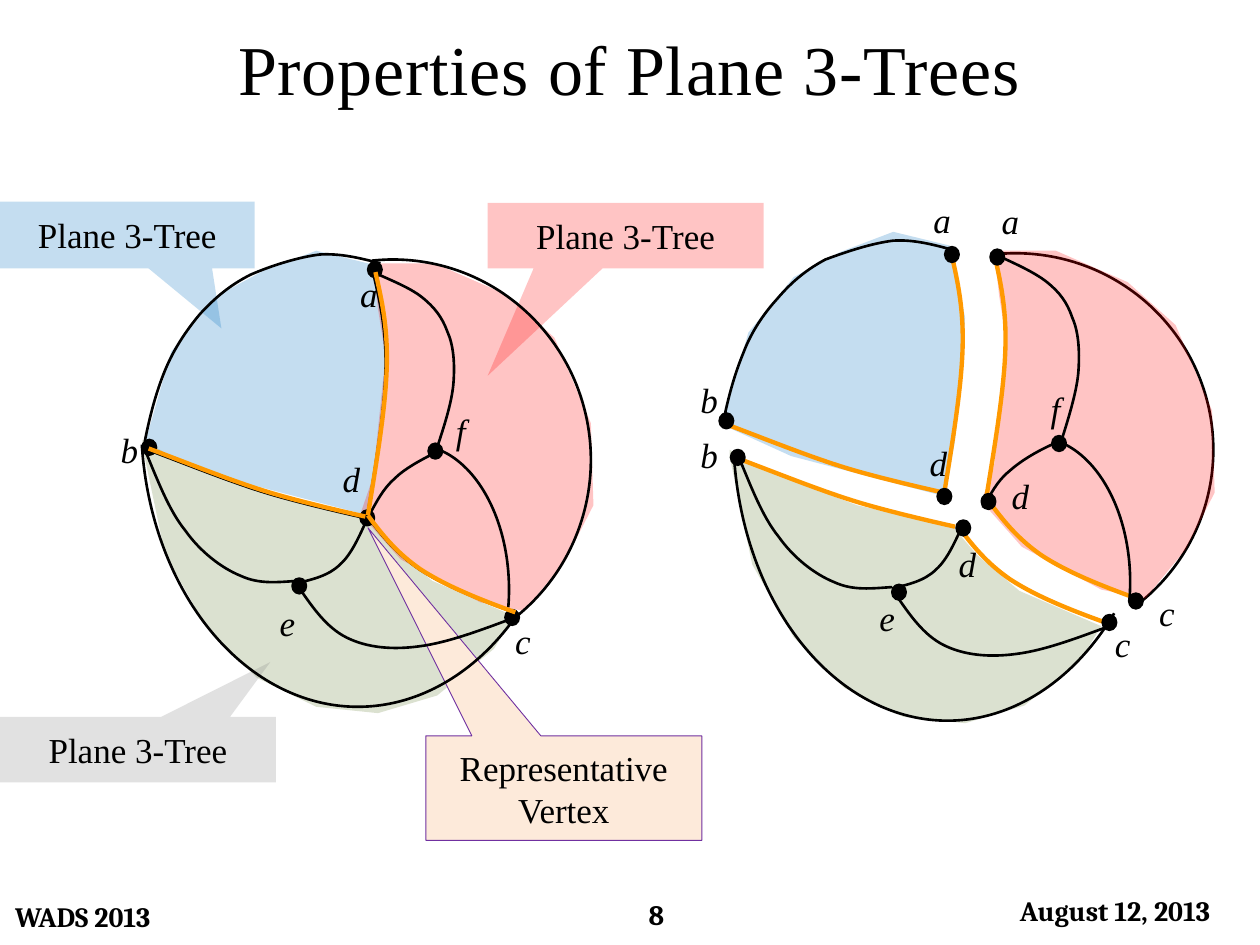
from dataclasses import dataclass

from lxml import etree
from pptx import Presentation
from pptx.dml.color import RGBColor
from pptx.enum.shapes import MSO_SHAPE
from pptx.enum.text import MSO_ANCHOR, PP_ALIGN
from pptx.oxml.ns import qn
from pptx.util import Pt

PX = 9144  # EMU in one px, 100 px to the inch
ARC, CALLOUT, ELLIPSE = MSO_SHAPE.ARC, MSO_SHAPE.RECTANGULAR_CALLOUT, MSO_SHAPE.OVAL
ROUNDED = MSO_SHAPE.ROUNDED_RECTANGLE
LEFT, CENTER = PP_ALIGN.LEFT, PP_ALIGN.CENTER
TOP, MIDDLE = MSO_ANCHOR.TOP, MSO_ANCHOR.MIDDLE


@dataclass(frozen=True)
class Theme:
    black: str = "000000"
    green: str = "677F34"
    blue: str = "0070C0"
    red: str = "FF0000"
    gray: str = "808080"
    peach: str = "FDEADA"
    purple: str = "7030A0"
    orange: str = "FF9900"
    tint: int = 23  # opacity in percent
    serif: str = "Times New Roman"
    footer_font: str = "Cambria"
    title_size: int = 40
    body_size: int = 20
    footer_size: int = 16
    edge_width: float = 1.5
    cut_width: float = 2.5
    node_width: float = 1.25
    callout_width: float = 0.5


THEME = Theme()


@dataclass(frozen=True)
class Region:
    outline: tuple
    color: str
    dx: int = 0
    dy: int = 0


@dataclass(frozen=True)
class Edge:
    """A curve placed by the top left corner of its box."""
    curve: tuple
    left: int
    top: int
    color: str = THEME.black
    width: float = THEME.edge_width
    stretch: tuple = (1, 1)


@dataclass(frozen=True)
class Arc:
    """Part of an ellipse, clockwise between two angles in degrees."""
    box: tuple
    start: float
    end: float


@dataclass(frozen=True)
class Node:
    left: int
    top: int


@dataclass(frozen=True)
class Label:
    text: str
    left: int
    top: int


@dataclass(frozen=True)
class Callout:
    text: str
    box: tuple
    tip: tuple
    color: str
    opacity: int = THEME.tint
    line: str | None = None


@dataclass(frozen=True)
class Footer:
    text: str
    box: tuple
    align: PP_ALIGN = CENTER


GREEN_AREA = ((290, 410), (310, 433), (343, 461), (408, 489), (392, 515), (347, 552), (300, 566),
              (251, 561), (204, 538), (164, 498), (131, 440), (113, 354), (113, 349), (141, 365),
              (214, 393))
BLUE_AREA = ((292, 409), (170, 377), (115, 352), (136, 279), (172, 235), (209, 215), (251, 199),
             (296, 210), (308, 267), (306, 306), (300, 365))
RED_AREA = ((286, 408), (318, 444), (381, 478), (416, 485), (448, 446), (471, 401), (469, 336),
            (440, 268), (402, 234), (345, 209), (296, 209), (300, 245), (306, 283), (296, 379))

# Edge curves: a start point, then three Bezier points per segment
AB = ((0, 149), (4, 129), (9, 110), (16, 93), (23, 76), (33, 61), (44, 48), (56, 35), (68, 25),
      (84, 17), (100, 10), (122, 3), (139, 1), (156, 0), (171, 4), (187, 8))
AD = ((6, 0), (11, 22), (16, 44), (15, 76), (14, 108), (7, 150), (0, 193))
BD = ((0, 0), (32, 12), (64, 25), (93, 34), (122, 43), (172, 54), (172, 54))
DC = ((0, 0), (11, 15), (23, 30), (42, 43), (62, 56), (89, 67), (117, 77))
ED = ((0, 50), (13, 47), (26, 44), (35, 35), (44, 27), (50, 13), (56, 0))
BE = ((0, 0), (10, 24), (19, 48), (32, 64), (44, 81), (61, 94), (76, 100), (91, 107), (106, 105),
      (122, 104))
DF = ((0, 48), (5, 39), (10, 29), (19, 21), (27, 13), (40, 6), (52, 0))
FA = ((53, 140), (59, 122), (65, 103), (66, 88), (67, 73), (66, 59), (61, 48), (57, 37), (51, 29),
      (41, 21), (31, 13), (15, 7), (0, 0))
EC = ((0, 0), (11, 16), (22, 32), (38, 40), (54, 48), (74, 50), (96, 47), (119, 44), (145, 34),
      (172, 24))


def cut(curve: tuple, left: int, top: int) -> Edge:
    """An edge along which the graph is split."""
    return Edge(curve, left, top, THEME.orange, THEME.cut_width)


FOOTERS = (Footer("8", (418, 708, 206, 35)), Footer("WADS 2013", (0, 705, 397, 45), LEFT),
           Footer("August 12, 2013", (770, 705, 230, 35)))
BACKDROP = (
    Region(GREEN_AREA, THEME.green), Region(BLUE_AREA, THEME.blue), Region(RED_AREA, THEME.red),
    Callout("Plane 3-Tree", (0, 160, 202, 53), (0.37, 1.4), THEME.blue),
    Callout("Plane 3-Tree", (387, 161, 219, 52), (-0.5, 2.14), THEME.red),
    Callout("Plane 3-Tree", (0, 569, 219, 52), (0.48, -1.34), THEME.gray),
    Callout("Representative Vertex", (338, 584, 219, 83), (-0.71, -2.49), THEME.peach, 100,
            THEME.purple))
WHOLE_GRAPH = (
    Label("a", 276, 222), Label("b", 86, 346), Label("c", 399, 497), Label("d", 262, 369),
    Label("e", 212, 483), Label("f", 352, 331),
    Node(401, 484), Node(232, 459), Node(286, 405), Node(340, 352), Node(292, 208), Node(113, 349),
    Edge(BD, 117, 357), Edge(AD, 291, 220), Edge(DC, 291, 409),
    Arc((155, 206, 314, 318), 264, 51.65), Edge(AB, 115, 201), Edge(ED, 235, 413),
    Edge(BE, 115, 357), Edge(DF, 294, 359), Edge(FA, 294, 215), Edge(EC, 237, 466),
    Arc((112, 107, 344, 454), 53.29, 173.69), Arc((254, 353, 150, 230), 281.13, 10.73))
CUTS = (cut(BD, 118, 356), cut(AD, 292, 216), cut(DC, 292, 409))
GREEN_PART = (
    Region(GREEN_AREA, THEME.green, 466, 8), Label("b", 546, 350), Label("c", 875, 500),
    Label("e", 688, 479), Node(708, 464), Edge(ED, 708, 417), Edge(BE, 586, 362),
    Edge(EC, 711, 472), Arc((582, 114, 340, 458), 47.37, 173.69), cut(DC, 760, 417),
    cut(BD, 586, 364), Node(759, 413), Node(875, 488), Label("d", 751, 436), Node(580, 357))
BLUE_PART = (
    Region(BLUE_AREA, THEME.blue, 458, -15), Label("a", 731, 163), Label("d", 728, 356),
    Edge(AB, 574, 190, stretch=(0.97, 0.97)), cut(BD, 577, 337), cut(AD, 749, 201),
    Node(744, 388), Node(750, 196), Node(571, 328), Label("b", 546, 306))
RED_PART = (
    Arc((649, 201, 314, 312), 264, 52.84), Region(RED_AREA, THEME.red, 493, -10),
    Label("f", 824, 313), Node(835, 346), Edge(DF, 780, 351, stretch=(1.13, 1.08)),
    Edge(FA, 790, 202, stretch=(1, 1.04)), cut(DC, 785, 398), cut(AD, 783, 201),
    Node(779, 392), Node(896, 471), Node(786, 198), Label("d", 793, 382), Label("c", 910, 475),
    Label("a", 785, 164), Arc((747, 347, 150, 230), 281.13, 10.73))


def emu(box: tuple) -> list:
    return [value * PX for value in box]


def paint(shape, fill=None, line=None, width: float = 1, opacity: int = 100) -> None:
    shape.shadow.inherit = False
    if fill:
        shape.fill.solid()
        shape.fill.fore_color.rgb = RGBColor.from_string(fill)
        if opacity < 100:
            color = shape.fill._xPr.find(".//" + qn("a:srgbClr"))
            etree.SubElement(color, qn("a:alpha")).set("val", str(opacity * 1000))
    else:
        shape.fill.background()
    if line:
        shape.line.color.rgb = RGBColor.from_string(line)
        shape.line.width = Pt(width)
    else:
        shape.line.fill.background()


def write(shape, text: str, size: int, font: str = THEME.serif, align: PP_ALIGN = CENTER,
          anchor: MSO_ANCHOR = MIDDLE, bold: bool = False, italic: bool = False) -> None:
    frame = shape.text_frame
    frame.text = text
    frame.word_wrap = True
    frame.vertical_anchor = anchor
    paragraph = frame.paragraphs[0]
    paragraph.alignment = align
    style = paragraph.runs[0].font
    style.name, style.size, style.bold, style.italic = font, Pt(size), bold, italic
    style.color.rgb = RGBColor.from_string(THEME.black)


def draw_region(shapes, region: Region) -> None:
    points = [(x + region.dx, y + region.dy) for x, y in region.outline]
    builder = shapes.build_freeform(*points[0], scale=PX)
    builder.add_line_segments(points[1:], close=True)
    paint(builder.convert_to_shape(), region.color, opacity=THEME.tint)


def draw_edge(shapes, edge: Edge) -> None:
    points = [(edge.left + round(x * edge.stretch[0]), edge.top + round(y * edge.stretch[1]))
              for x, y in edge.curve]
    builder = shapes.build_freeform(*points[0], scale=PX)
    builder.add_line_segments(points[1:], close=False)
    shape = builder.convert_to_shape()
    outline = shape._element.find(".//" + qn("a:path"))
    lines = outline.findall(qn("a:lnTo"))
    for first in range(0, len(lines), 3):
        bezier = etree.SubElement(outline, qn("a:cubicBezTo"))
        for line in lines[first:first + 3]:
            bezier.append(line[0])
            outline.remove(line)
    paint(shape, line=edge.color, width=edge.width)


def draw_arc(shapes, arc: Arc) -> None:
    shape = shapes.add_shape(ARC, *emu(arc.box))
    for index, degrees in enumerate((arc.start, arc.end)):
        shape.adjustments[index] = degrees * 0.6
    paint(shape, line=THEME.black, width=THEME.edge_width)


def draw_node(shapes, node: Node) -> None:
    shape = shapes.add_shape(ELLIPSE, *emu((node.left, node.top, 11, 12)))
    paint(shape, THEME.black, THEME.black, THEME.node_width)


def draw_label(shapes, label: Label) -> None:
    box = shapes.add_textbox(*emu((label.left, label.top, 22, 22)))
    write(box, label.text, THEME.body_size, italic=True)


def draw_callout(shapes, callout: Callout) -> None:
    shape = shapes.add_shape(CALLOUT, *emu(callout.box))
    shape.adjustments[0], shape.adjustments[1] = callout.tip
    paint(shape, callout.color, callout.line, THEME.callout_width, callout.opacity)
    write(shape, callout.text, THEME.body_size)


def draw_footer(shapes, footer: Footer) -> None:
    shape = shapes.add_shape(ROUNDED, *emu(footer.box))
    paint(shape)
    write(shape, footer.text, THEME.footer_size, THEME.footer_font, footer.align, bold=True)


def draw_title(shapes, text: str) -> None:
    title = shapes.add_textbox(*emu((0, 15, 1000, 77)))
    write(title, text, THEME.title_size, anchor=TOP)
    title.text_frame.paragraphs[0].runs[0]._r.get_or_add_rPr().set("spc", "50")


DRAW = {Region: draw_region, Edge: draw_edge, Arc: draw_arc, Node: draw_node, Label: draw_label,
        Callout: draw_callout, Footer: draw_footer}


def draw_all(shapes, items: tuple) -> None:
    for item in items:
        DRAW[type(item)](shapes, item)


def main() -> None:
    presentation = Presentation()
    presentation.slide_width, presentation.slide_height = emu((1000, 750))
    shapes = presentation.slides.add_slide(presentation.slide_layouts[6]).shapes
    draw_title(shapes, "Properties of Plane 3-Trees")
    draw_all(shapes, FOOTERS + BACKDROP)
    draw_all(shapes.add_group_shape().shapes, WHOLE_GRAPH)
    draw_all(shapes, CUTS)
    for part in (GREEN_PART, BLUE_PART, RED_PART):
        draw_all(shapes.add_group_shape().shapes, part)
    presentation.save("out.pptx")


if __name__ == "__main__":
    main()
